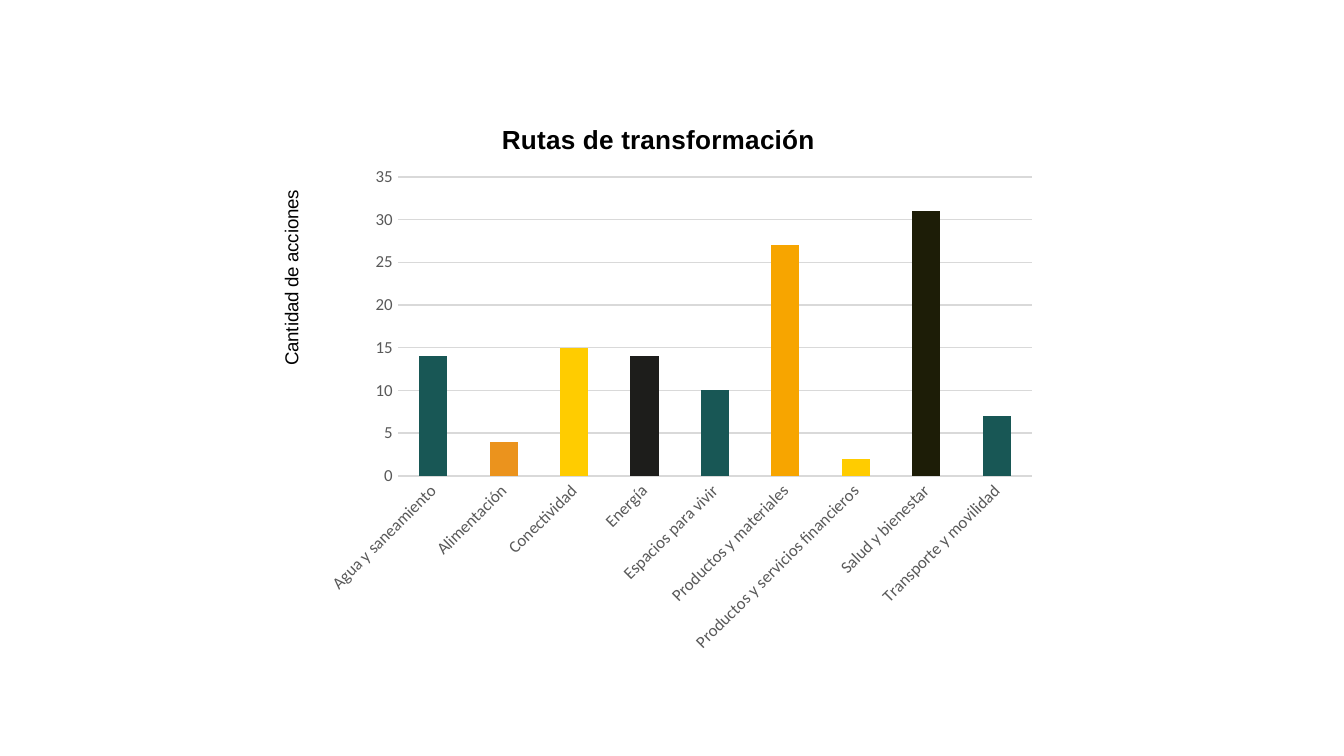
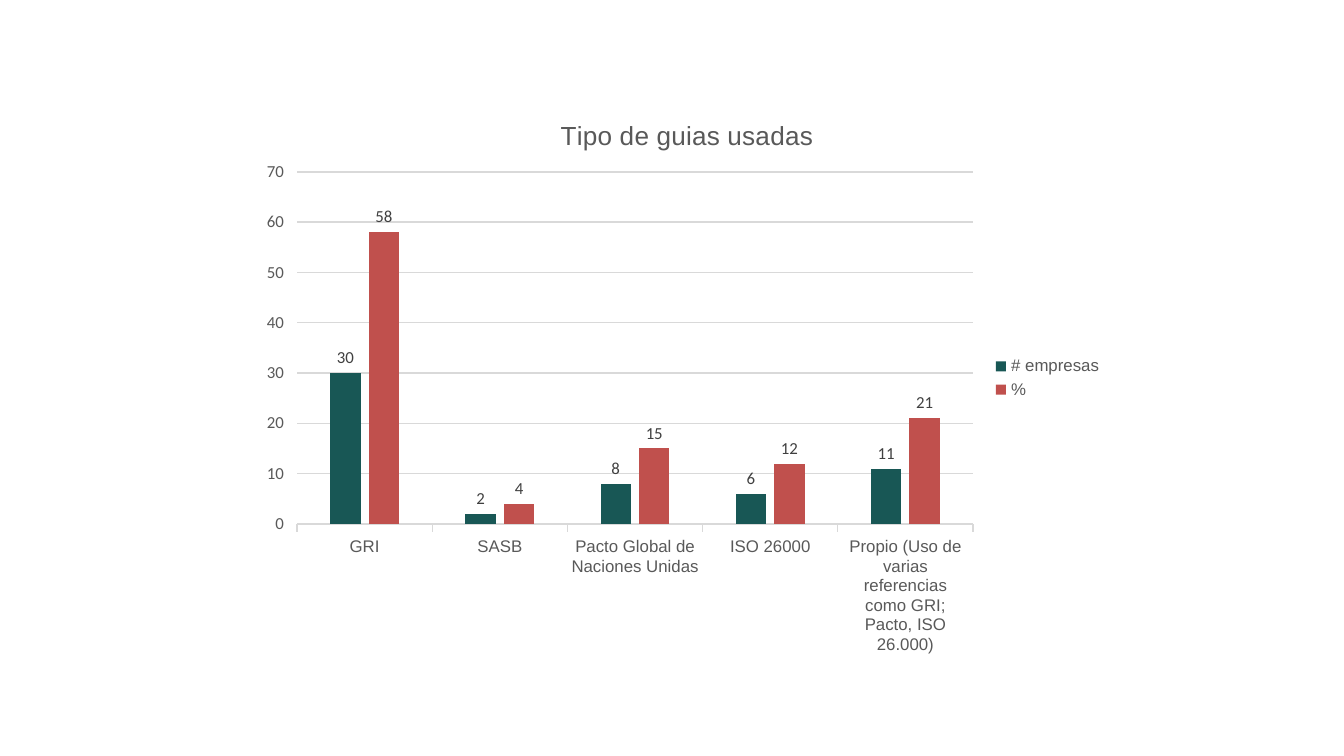
import pptx
import pptx.util
import pptx.chart.data
import pptx.dml.color
import pptx.enum.chart
import pptx.oxml
import pptx.oxml.ns

PX = 914400 / 134.4
COLORS = {
    "black": "000000", "text": "595959", "label": "404040", "grid": "D9D9D9",
    "teal": "185755", "orange": "EB931D", "yellow": "FFCC00", "ink": "1D1D1B",
    "amber": "F7A500", "olive": "1D1D07", "red": "C0504D",
}
XL = pptx.enum.chart
QN = pptx.oxml.ns.qn


def px(n):
    return pptx.util.Emu(round(n * PX))


def rgb(name):
    return pptx.dml.color.RGBColor.from_string(COLORS[name])


def set_font(font, size, color, name="Arial", bold=False):
    font.size = pptx.util.Pt(size)
    font.bold = bold
    font.name = name
    font.color.rgb = rgb(color)


def set_line(line, color="grid"):
    line.color.rgb = rgb(color)
    line.width = pptx.util.Pt(0.75)


def place(el, frame, left, top, width=None, height=None, inner=False):
    """Fix a chart part at slide px, as fractions of the chart frame."""
    fx, fy, fw, fh = frame
    parts = [("layoutTarget", "inner")] if inner else []
    parts += [("xMode", "edge"), ("yMode", "edge"),
              ("x", round((left - fx) / fw, 4)), ("y", round((top - fy) / fh, 4))]
    if width:
        parts += [("w", round(width / fw, 4)), ("h", round(height / fh, 4))]
    body = "".join(f'<c:{tag} val="{val}"/>' for tag, val in parts)
    layout = pptx.oxml.parse_xml(
        f'<c:layout {pptx.oxml.ns.nsdecls("c")}><c:manualLayout>{body}'
        '</c:manualLayout></c:layout>')
    for old in el.findall(QN("c:layout")):
        el.remove(old)
    before = [c for c in el if c.tag in (QN("c:tx"), QN("c:legendPos"))]
    el.insert(len(before), layout)


def rotate(el, degrees):
    body = next(el.iter(QN("a:bodyPr")))
    body.set("rot", str(degrees * 60000))
    body.set("vert", "horz")


def set_title(title, text, frame, at, size, color, bold=False):
    p = title.text_frame.paragraphs[0]
    p.text = text
    set_font(p.font, size, color, bold=bold)
    place(title._element, frame, *at)


def style_axes(ch, top, step, tick, cat_font):
    cat, val = ch.category_axis, ch.value_axis
    for ax, name in ((cat, cat_font), (val, "Calibri")):
        ax.major_tick_mark = tick
        ax.minor_tick_mark = XL.XL_TICK_MARK.NONE
        set_font(ax.tick_labels.font, 9, "text", name)
    set_line(cat.format.line)
    val.format.line.fill.background()
    val.minimum_scale, val.maximum_scale, val.major_unit = 0, top, step
    val.has_major_gridlines = True
    set_line(val.major_gridlines.format.line)


def add_columns(s, kind, frame, plot_box, cats, series, gap, overlap):
    """series: list of (name, values, color)."""
    data = pptx.chart.data.CategoryChartData()
    data.categories = cats
    for name, vals, _ in series:
        data.add_series(name, vals)
    ch = s.shapes.add_chart(kind, *map(px, frame), data).chart
    set_font(ch.font, 10, "black", "Calibri")
    plot = ch.plots[0]
    plot.vary_by_categories = False
    plot.gap_width, plot.overlap = gap, overlap
    for ser, (_, _, color) in zip(plot.series, series):
        ser.invert_if_negative = False
        ser.format.fill.solid()
        ser.format.fill.fore_color.rgb = rgb(color)
    place(ch._chartSpace.chart.plotArea, frame, *plot_box, inner=True)
    ch.has_title = True
    return ch


def routes_slide(s):
    frame = (258, 93, 792, 571)
    bars = [
        ("Agua y saneamiento", 14, "teal"),
        ("Alimentación", 4, "orange"),
        ("Conectividad", 15, "yellow"),
        ("Energía", 14, "ink"),
        ("Espacios para vivir", 10, "teal"),
        ("Productos y materiales", 27, "amber"),
        ("Productos y servicios financieros", 2, "yellow"),
        ("Salud y bienestar", 31, "olive"),
        ("Transporte y movilidad", 7, "teal"),
    ]
    cats, vals, colors = zip(*bars)
    ch = add_columns(s, XL.XL_CHART_TYPE.COLUMN_STACKED, frame, (398, 177, 634, 299),
                     cats, [("Series 1", vals, "teal")], 150, 100)
    ch.has_legend = False
    set_title(ch.chart_title, "Rutas de transformación", frame, (497, 118), 14, "black", True)
    style_axes(ch, 35, 5, XL.XL_TICK_MARK.NONE, "Calibri")
    rotate(ch.category_axis._element.find(QN("c:txPr")), -45)
    # Vertical axis title
    title = ch.value_axis.axis_title
    set_title(title, "Cantidad de acciones", frame, (276, 187), 10, "black")
    rotate(title._element, -90)
    # One colour per route
    for i, color in enumerate(colors):
        fill = ch.plots[0].series[0].points[i].format.fill
        fill.solid()
        fill.fore_color.rgb = rgb(color)


def guides_slide(s):
    frame = (249, 90, 867, 577)
    cats = ["GRI", "SASB", "Pacto Global de Naciones Unidas", "ISO 26000",
            "Propio (Uso de varias referencias como GRI; Pacto, ISO 26.000)"]
    series = [("# empresas", (30, 2, 8, 6, 11), "teal"),
              ("%", (58, 4, 15, 12, 21), "red")]
    ch = add_columns(s, XL.XL_CHART_TYPE.COLUMN_CLUSTERED, frame, (297, 172, 676, 352),
                     cats, series, 219, -27)
    set_title(ch.chart_title, "Tipo de guias usadas", frame, (556, 114), 14, "text")
    style_axes(ch, 70, 10, XL.XL_TICK_MARK.OUTSIDE, "Arial")
    # Values above the columns
    for ser in ch.plots[0].series:
        labels = ser.data_labels
        labels.show_value = True
        labels.number_format, labels.number_format_is_linked = "0", False
        labels.position = XL.XL_LABEL_POSITION.OUTSIDE_END
        set_font(labels.font, 9, "label", "Calibri")
    # Legend
    ch.has_legend = True
    ch.legend.position = XL.XL_LEGEND_POSITION.RIGHT
    ch.legend.include_in_layout = False
    set_font(ch.legend.font, 9, "text")
    place(ch.legend._element, frame, 990, 353, 115, 50)


def main():
    prs = pptx.Presentation()
    prs.slide_width, prs.slide_height = px(1344), px(756)
    for build in (routes_slide, guides_slide):
        build(prs.slides.add_slide(prs.slide_layouts[6]))
    prs.save("out.pptx")


if __name__ == "__main__":
    main()
